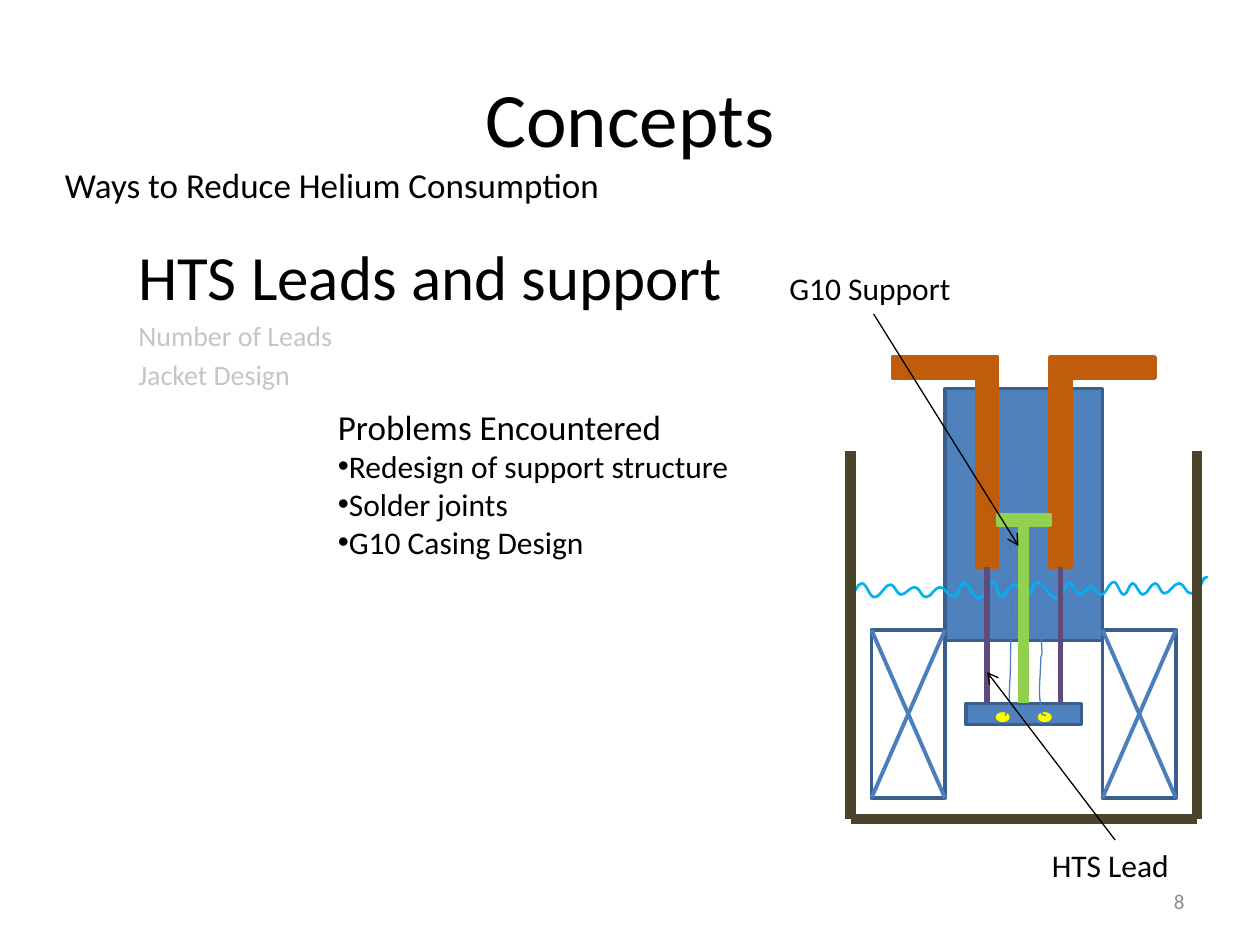
from dataclasses import dataclass

from lxml.etree import SubElement
from pptx import Presentation
from pptx.dml.color import RGBColor
from pptx.enum.shapes import MSO_CONNECTOR, MSO_SHAPE
from pptx.enum.text import MSO_ANCHOR, PP_ALIGN
from pptx.oxml.ns import qn
from pptx.util import Emu, Inches, Pt


@dataclass(frozen=True)
class Theme:
    font: str = "Calibri"
    title: int = 44
    topic: int = 36
    heading: int = 20
    label: int = 18
    muted_size: int = 16
    number: int = 12
    text: str = "000000"
    muted: str = "C5C5C5"
    number_color: str = "8C8C8C"
    steel: str = "4F81BD"
    steel_edge: str = "3A5F8C"
    wire: str = "4B7EBC"
    copper: str = "C05D0C"
    helium: str = "00B0F0"
    tank: str = "4A452A"
    lead: str = "604A7B"
    support: str = "92D050"
    joint: str = "FFFF00"
    white: str = "FFFFFF"


THEME = Theme()
COLUMNS, ROWS = 120, 90
CELL = Inches(10) / COLUMNS

# Curve points in hundredths of an inch
WAVE = [(675, 472), (684, 463), (694, 474), (707, 464), (715, 472), (726, 466),
        (735, 474), (746, 466), (757, 474), (765, 463), (777, 475), (789, 462),
        (794, 474), (805, 464), (815, 474), (823, 462), (839, 475), (849, 463),
        (857, 472), (866, 466), (874, 472), (884, 462), (892, 472), (899, 463),
        (907, 472), (917, 463), (924, 471), (936, 463), (945, 471), (958, 458),
        (948, 471)]
WIRES = [
    [(798, 568), (799, 565), (801, 555), (802, 527), (803, 477), (801, 466),
     (802, 423), (803, 420), (802, 406), (801, 384), (800, 379), (798, 367)],
    [(830, 568), (827, 567), (826, 564), (825, 549), (826, 522), (827, 519),
     (826, 499), (827, 496), (827, 457), (825, 430), (826, 414), (827, 411),
     (825, 399), (826, 367)],
]


def cells(*values):
    return [Emu(round(v * CELL)) for v in values]


def set_attrs(obj, values):
    for name, value in values.items():
        setattr(obj, name, value)


def set_line(line, color, width):
    line.color.rgb = RGBColor.from_string(color)
    line.width = Pt(width)


def add_block(s, box, fill, edge=None, kind=MSO_SHAPE.RECTANGLE):
    sp = s.shapes.add_shape(kind, *cells(*box))
    sp.shadow.inherit = False
    sp.fill.solid()
    sp.fill.fore_color.rgb = RGBColor.from_string(fill)
    set_line(sp.line, edge or fill, 2)
    return sp


def add_line(s, ends, color, width, arrow=False):
    cxn = s.shapes.add_connector(MSO_CONNECTOR.STRAIGHT, *cells(*ends))
    set_line(cxn.line, color, width)
    if arrow:
        SubElement(cxn.line._get_or_add_ln(), qn("a:tailEnd"), type="arrow")
    SubElement(cxn._element.spPr, qn("a:effectLst"))
    return cxn


def add_curve(s, points, color, width, bend):
    """Draw a Bézier through points; bend is the (x, y) pull of its handles."""
    builder = s.shapes.build_freeform(*points[0], scale=Inches(1) / 100)
    builder.add_line_segments(points[1:], close=False)
    sp = builder.convert_to_shape()
    sp.shadow.inherit = False
    sp.fill.background()
    set_line(sp.line, color, width)

    outline = next(sp._element.iter(qn("a:path")))
    start = None
    for step in list(outline):
        end = [int(step[0].get(axis)) for axis in "xy"]
        if start:
            pull = [(b - a) * k for a, b, k in zip(start, end, bend)]
            curve = SubElement(outline, qn("a:cubicBezTo"))
            for x, y in ((start[0] + pull[0], start[1] + pull[1]),
                         (end[0] - pull[0], end[1] - pull[1]), end):
                SubElement(curve, qn("a:pt"), x=str(round(x)), y=str(round(y)))
            outline.remove(step)
        start = end


def format_run(r, size, color):
    set_attrs(r.font, {"name": THEME.font, "size": Pt(size)})
    r.font.color.rgb = RGBColor.from_string(color)


def add_text(s, box, lines, wrap=True, before=0, bullets=False,
             align=PP_ALIGN.LEFT, anchor=MSO_ANCHOR.TOP):
    """Write (text, size, color) lines; before is a share of the type size.

    With bullets, every line after the first gets one.
    """
    tf = s.shapes.add_textbox(*cells(*box)).text_frame
    set_attrs(tf, {"word_wrap": wrap, "vertical_anchor": anchor})
    for i, (text, size, color) in enumerate(lines):
        p = tf.add_paragraph() if i else tf.paragraphs[0]
        set_attrs(p, {"alignment": align, "space_before": Pt(size * before)})
        if bullets and i:
            pPr = p._p.get_or_add_pPr()
            SubElement(pPr, qn("a:buFont"), typeface="Arial")
            SubElement(pPr, qn("a:buChar"), char="•")
        r = p.add_run()
        r.text = text
        format_run(r, size, color)


def add_title(s, text):
    sp = s.shapes.title
    left, top, width, height = cells(6, 3.6, 108, 15)
    set_attrs(sp, {"left": left, "top": top, "width": width, "height": height})
    p = sp.text_frame.paragraphs[0]
    sp.text_frame.vertical_anchor = MSO_ANCHOR.MIDDLE
    p.alignment = PP_ALIGN.CENTER
    r = p.add_run()
    r.text = text
    format_run(r, THEME.title, THEME.text)


def add_coil(s, col, row=60, width=7, height=16):
    add_block(s, (col, row, width, height), THEME.white, THEME.steel_edge)
    right, bottom = col + width, row + height
    for ends in ((col, row, right, bottom), (col, bottom, right, row)):
        add_line(s, ends, THEME.wire, 2.25)


def add_current_lead(s, col, arm_col):
    add_block(s, (arm_col, 34, 10, 2), THEME.copper)
    bar = add_block(s, (col, 36, 2, 18), THEME.copper)
    lead = add_line(s, (col + 1, 54, col + 1, 67), THEME.lead, 3)
    lead.begin_connect(bar, 2)


def add_cryostat(s):
    add_block(s, (90, 37, 15, 24), THEME.steel, THEME.steel_edge)
    add_curve(s, WAVE, THEME.helium, 1.5, bend=(0.4, 0))
    bracket = add_block(s, (92, 67, 11, 2), THEME.steel, THEME.steel_edge)
    for col in (95, 99):
        add_block(s, (col, 68, 1, 0.6), THEME.joint, kind=MSO_SHAPE.OVAL)
    for points in WIRES:
        add_curve(s, points, THEME.wire, 0.75, bend=(0, 0.4))
    for ends in ((81, 43, 81, 78), (114, 43, 114, 78),
                 (82, 78, 114, 78), (84, 78, 81, 78)):
        add_line(s, ends, THEME.tank, 6)
    for col in (83, 105):
        add_coil(s, col)
    for col, arm_col in ((93, 85), (100, 100)):
        add_current_lead(s, col, arm_col)
    cap = add_block(s, (95, 49, 5, 1), THEME.support)
    stem = add_line(s, (97.5, 50, 97.5, 67), THEME.support, 6)
    stem.begin_connect(cap, 2)
    stem.end_connect(bracket, 0)


def add_callout(s, text, box, ends):
    add_line(s, ends, THEME.text, 0.75, arrow=True)
    add_text(s, box, [(text, THEME.label, THEME.text)], wrap=False)


def main():
    prs = Presentation()
    prs.slide_width, prs.slide_height = cells(COLUMNS, ROWS)
    s = prs.slides.add_slide(prs.slide_layouts[5])
    t = THEME

    add_title(s, "Concepts")
    add_text(s, (12, 22, 108, 59.4), [
        ("HTS Leads and support", t.topic, t.text),
        ("Number of Leads", t.muted_size, t.muted),
        ("Jacket Design", t.muted_size, t.muted)], before=0.2)
    add_cryostat(s)
    add_text(s, (5, 15, 81, 5.3),
             [("Ways to Reduce Helium Consumption", t.heading, t.text)])
    add_text(s, (31, 38, 45, 27.1), [
        ("Problems Encountered", t.heading, t.text),
        ("Redesign of support structure", t.label, t.text),
        ("Solder joints", t.label, t.text),
        ("G10 Casing Design", t.label, t.text)], bullets=True)
    add_callout(s, "G10 Support", (74, 25, 18.4, 4.8), (83.2, 29.9, 97, 52))
    add_callout(s, "HTS Lead", (99, 80, 14.4, 4.8), (106.2, 80, 94, 64))
    add_text(s, (86, 83.4, 28, 4.8), [("8", t.number, t.number_color)],
             align=PP_ALIGN.RIGHT, anchor=MSO_ANCHOR.MIDDLE)
    prs.save("out.pptx")


if __name__ == "__main__":
    main()
